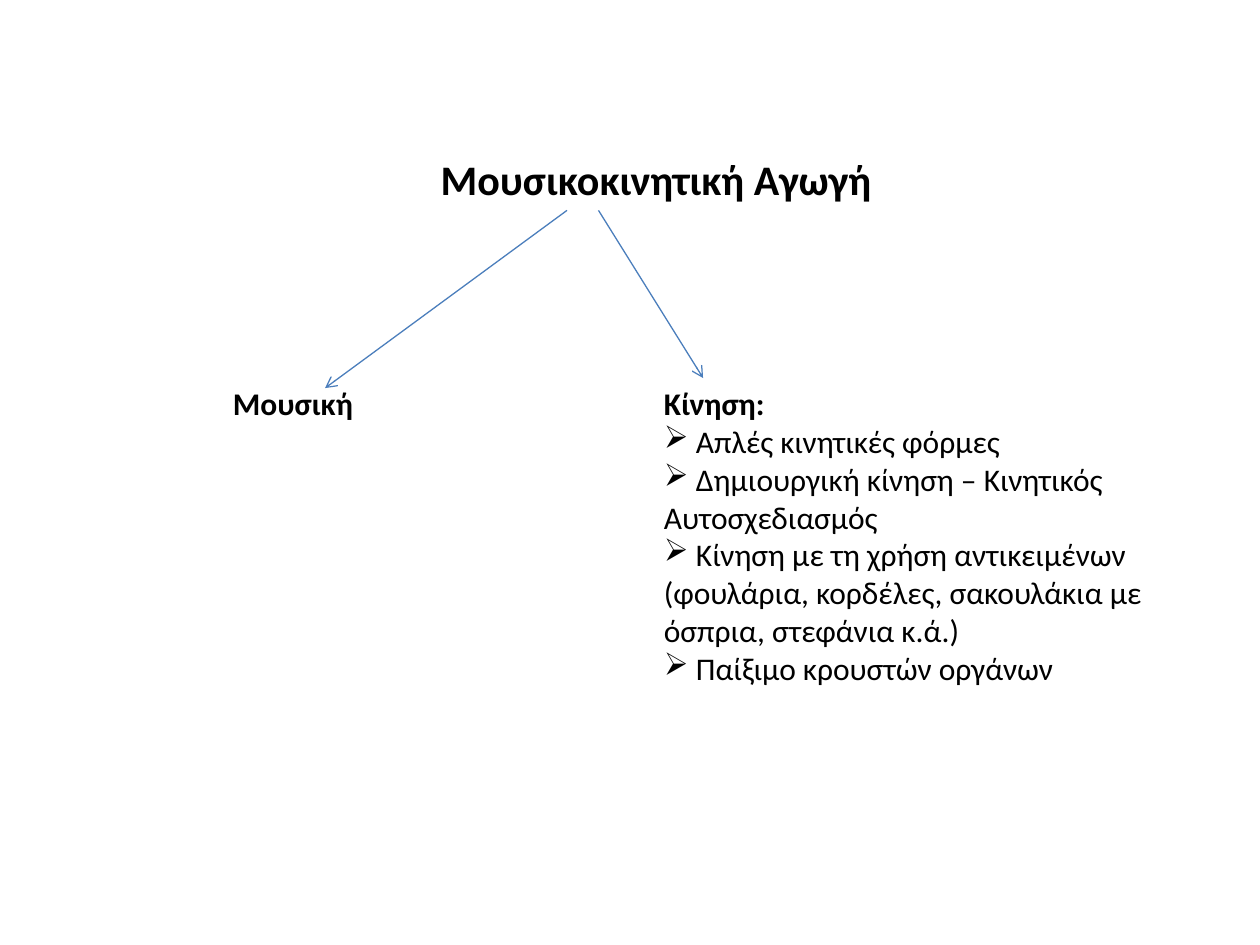
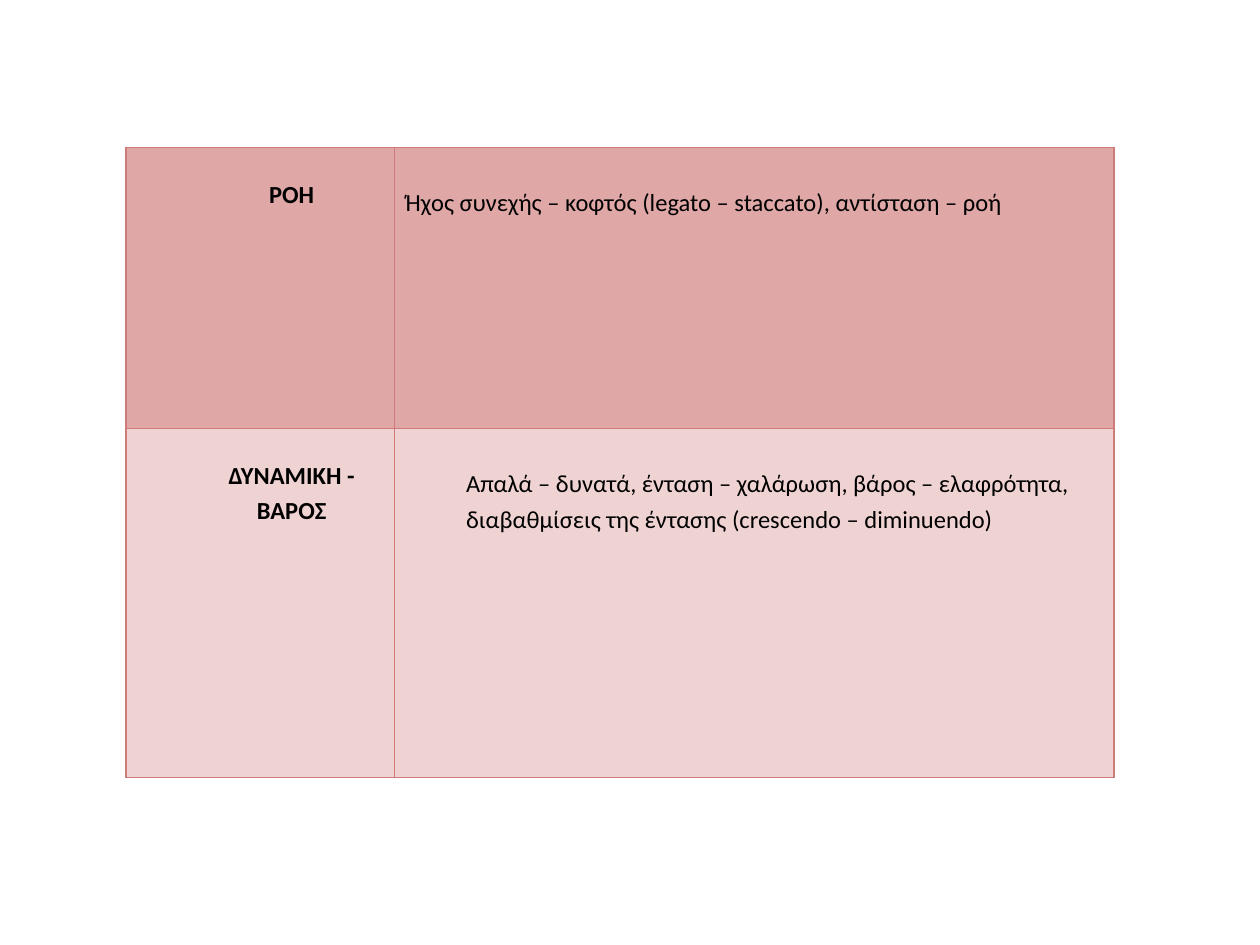
"""Builds two slides on music and movement education."""
from dataclasses import dataclass

from lxml.etree import SubElement
from pptx import Presentation
from pptx.dml.color import RGBColor
from pptx.enum.shapes import MSO_CONNECTOR
from pptx.enum.text import MSO_ANCHOR, MSO_AUTO_SIZE, PP_ALIGN
from pptx.oxml.ns import qn
from pptx.util import Inches, Pt


@dataclass(frozen=True)
class Theme:
    font: str = "Calibri"
    ink: str = "000000"
    arrow: str = "4B7EBC"
    border: str = "CF7B79"
    bands: tuple = ("DFA7A6", "EFD3D2")
    title: int = 24
    body: int = 18
    table: int = 14


THEME = Theme()

TITLE = ("Μουσικοκινητική Αγωγή ", (2.67, 1.17, 4.42, 0.5))
BRANCHES = [
    ("Μουσική", [], (1.75, 3, 1.33, 0.4)),
    ("Κίνηση:", [
        " Απλές κινητικές φόρμες",
        " Δημιουργική κίνηση – Κινητικός Αυτοσχεδιασμός",
        " Κίνηση με τη χρήση αντικειμένων (φουλάρια, κορδέλες, "
        "σακουλάκια με όσπρια, στεφάνια κ.ά.)",
        " Παίξιμο κρουστών οργάνων",
    ], (5.17, 3, 4.08, 2.83)),
]
ARROWS = [((4.5, 1.67), (2.58, 3.08)), ((4.75, 1.67), (5.58, 3))]

ROWS = [
    ("ΡΟΗ", "Ήχος συνεχής – κοφτός (legato – staccato), αντίσταση – ροή", 0.02),
    ("ΔΥΝΑΜΙΚΗ - ΒΑΡΟΣ",
     "Απαλά – δυνατά, ένταση – χαλάρωση, βάρος – ελαφρότητα, "
     "διαβαθμίσεις της έντασης (crescendo – diminuendo)", 0.5),
]
CORNER = (1, 1.17)
WIDTHS = (2.13, 5.71)
HEIGHTS = (2.23, 2.77)
INDENT = 0.5
TOPS = (0.21, 0.28)


def apply(item, values):
    for name, value in values.items():
        setattr(item, name, value)


def place(shape, box):
    apply(shape, dict(zip(("left", "top", "width", "height"), map(Inches, box))))


def write(para, text, size, bold=False):
    run = para.add_run()
    run.text = text
    apply(run.font, {"name": THEME.font, "size": Pt(size), "bold": bold})
    run.font.color.rgb = RGBColor.from_string(THEME.ink)


def fit(frame):
    apply(frame, {"word_wrap": True, "vertical_anchor": MSO_ANCHOR.TOP,
                  "auto_size": MSO_AUTO_SIZE.SHAPE_TO_FIT_TEXT})


def indent(para, left):
    props = para._p.get_or_add_pPr()
    props.set("marL", str(Inches(left)))
    props.set("indent", "0")
    return props


def add_title(slide):
    text, box = TITLE
    shape = slide.shapes.title
    place(shape, box)
    fit(shape.text_frame)
    para = shape.text_frame.paragraphs[0]
    para.alignment = PP_ALIGN.RIGHT
    write(para, text, THEME.title, True)


def add_branch(slide, head, items, box):
    frame = slide.shapes.add_textbox(*map(Inches, box)).text_frame
    fit(frame)
    write(frame.paragraphs[0], head, THEME.body, True)
    for item in items:
        para = frame.add_paragraph()
        SubElement(indent(para, 0), qn("a:buChar")).set("char", "➢")
        write(para, item, THEME.body)


def add_arrow(slide, start, end):
    line = slide.shapes.add_connector(
        MSO_CONNECTOR.STRAIGHT, *map(Inches, start + end))
    line.line.color.rgb = RGBColor.from_string(THEME.arrow)
    line.line.width = Pt(0.75)
    SubElement(line.line._get_or_add_ln(), qn("a:tailEnd")).set("type", "arrow")
    SubElement(line._element.spPr, qn("a:effectLst"))


def paint(cell, fill):
    props = cell._tc.get_or_add_tcPr()
    for side in "LRTB":
        edge = SubElement(props, qn(f"a:ln{side}"))
        edge.set("w", str(Pt(1)))
        solid = SubElement(edge, qn("a:solidFill"))
        SubElement(solid, qn("a:srgbClr")).set("val", THEME.border)
    cell.fill.solid()
    cell.fill.fore_color.rgb = RGBColor.from_string(fill)


def add_grid(slide):
    size = (sum(WIDTHS), sum(HEIGHTS))
    grid = slide.shapes.add_table(
        len(ROWS), len(WIDTHS), *map(Inches, CORNER + size)).table
    apply(grid, {"first_row": False, "horz_banding": False})
    for col, width in zip(grid.columns, WIDTHS):
        col.width = Inches(width)
    for row, height, fill, (head, text, left) in zip(
            grid.rows, HEIGHTS, THEME.bands, ROWS):
        row.height = Inches(height)
        parts = [(head, INDENT, PP_ALIGN.CENTER, True, 0),
                 (text, left, PP_ALIGN.LEFT, False, 10)]
        for cell, top, (words, inset, align, bold, after) in zip(
                row.cells, TOPS, parts):
            paint(cell, fill)
            apply(cell, {"margin_left": Inches(0.07),
                         "margin_right": Inches(0.07),
                         "margin_top": Inches(top), "margin_bottom": 0})
            para = cell.text_frame.paragraphs[0]
            indent(para, inset)
            apply(para, {"alignment": align, "line_spacing": 1.2,
                         "space_after": Pt(after)})
            write(para, words, THEME.table, bold)


def main():
    deck = Presentation()
    apply(deck, {"slide_width": Inches(10), "slide_height": Inches(7.5)})
    slide = deck.slides.add_slide(deck.slide_layouts.get_by_name("Title Only"))
    add_title(slide)
    for branch in BRANCHES:
        add_branch(slide, *branch)
    for arrow in ARROWS:
        add_arrow(slide, *arrow)
    add_grid(deck.slides.add_slide(deck.slide_layouts.get_by_name("Blank")))
    deck.save("out.pptx")


if __name__ == "__main__":
    main()
